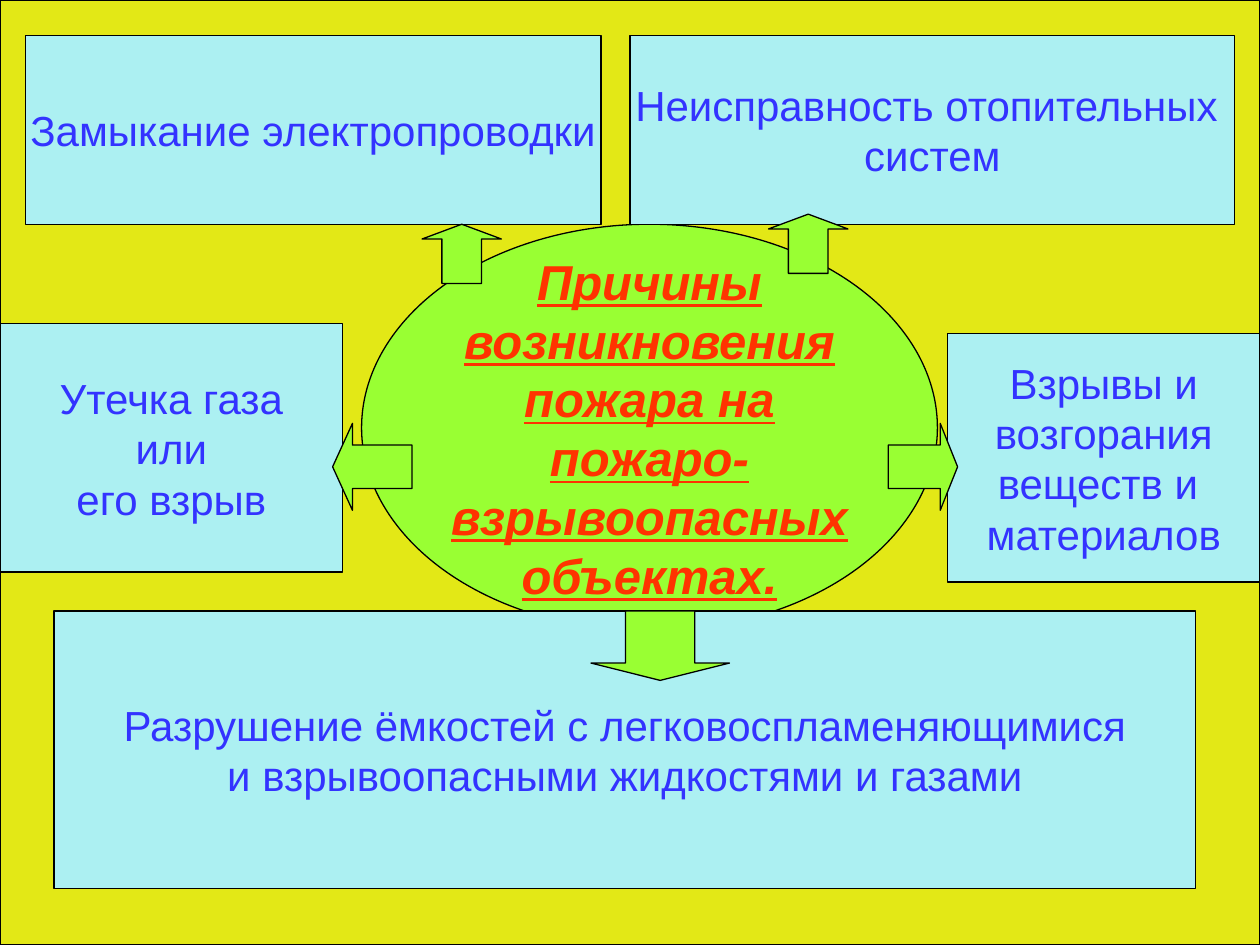
from pptx import Presentation
from pptx.dml.color import RGBColor
from pptx.enum.shapes import MSO_SHAPE
from pptx.enum.text import MSO_ANCHOR, PP_ALIGN
from pptx.util import Inches, Pt

YELLOW = RGBColor(0xE3, 0xE8, 0x16)
GREEN = RGBColor(0x99, 0xFF, 0x33)
PALE_BLUE = RGBColor(0xAC, 0xF0, 0xF2)
BLUE = RGBColor(0x33, 0x33, 0xFF)
RED = RGBColor(0xFF, 0x33, 0x00)
BLACK = RGBColor(0, 0, 0)

TOPIC = ["Причины", "возникновения", "пожара на", "пожаро-",
         "взрывоопасных", "объектах."]

# Each cause: box (left, top, width, height) and its lines
CAUSES = [
    ((0.2, 0.28, 4.57, 1.5), ["Замыкание электропроводки"]),
    ((5, 0.28, 4.8, 1.5), ["Неисправность отопительных ", "систем"]),
    ((0, 2.57, 2.72, 1.97), ["Утечка газа", "или", "его взрыв"]),
    ((7.52, 2.65, 2.48, 1.97),
     ["Взрывы и", "возгорания", "веществ и ", "материалов"]),
    ((0.43, 4.85, 9.06, 2.2),
     ["Разрушение ёмкостей с легковоспламеняющимися",
      "и взрывоопасными жидкостями и газами"]),
]

ARROWS = [
    (MSO_SHAPE.UP_ARROW, (3.35, 1.78, 0.63, 0.47)),
    (MSO_SHAPE.UP_ARROW, (6.1, 1.7, 0.63, 0.47)),
    (MSO_SHAPE.LEFT_ARROW, (2.64, 3.36, 0.63, 0.69)),
    (MSO_SHAPE.RIGHT_ARROW, (7.05, 3.36, 0.55, 0.69)),
    (MSO_SHAPE.DOWN_ARROW, (4.69, 4.85, 1.1, 0.55)),
]


def add_outlined(page, kind, box, fill):
    shape = page.shapes.add_shape(kind, *(Inches(length) for length in box))
    shape.shadow.inherit = False
    shape.fill.solid()
    shape.fill.fore_color.rgb = fill
    shape.line.color.rgb = BLACK
    shape.line.width = Pt(0.75)
    return shape


def write_lines(shape, lines, size=24, color=BLUE, emphasis=False):
    """Centre one paragraph per line in the shape."""
    frame = shape.text_frame
    frame.word_wrap = False
    frame.vertical_anchor = MSO_ANCHOR.MIDDLE
    for index, line in enumerate(lines):
        para = frame.add_paragraph() if index else frame.paragraphs[0]
        para.alignment = PP_ALIGN.CENTER
        span = para.add_run()
        span.text = line
        font = span.font
        font.name = "Arial"
        font.size = Pt(size)
        font.color.rgb = color
        font.bold = font.italic = font.underline = emphasis


def add_topic(page, box):
    oval = add_outlined(page, MSO_SHAPE.OVAL, box, GREEN)
    write_lines(oval, TOPIC, size=28, color=RED, emphasis=True)


def add_cause(page, box, lines):
    write_lines(add_outlined(page, MSO_SHAPE.RECTANGLE, box, PALE_BLUE), lines)


def add_arrow(page, kind, box):
    arrow = add_outlined(page, kind, box, GREEN)
    arrow.adjustments[0] = 0.5
    arrow.adjustments[1] = 0.25


def main():
    deck = Presentation()
    deck.slide_width, deck.slide_height = Inches(10), Inches(7.5)
    page = deck.slides.add_slide(deck.slide_layouts[6])

    # Backdrop, topic, causes, then the arrows on top
    add_outlined(page, MSO_SHAPE.RECTANGLE, (0, 0, 10, 7.5), YELLOW)
    add_topic(page, (2.87, 1.78, 4.57, 3.23))
    for box, lines in CAUSES:
        add_cause(page, box, lines)
    for kind, box in ARROWS:
        add_arrow(page, kind, box)

    deck.save("out.pptx")


if __name__ == "__main__":
    main()
